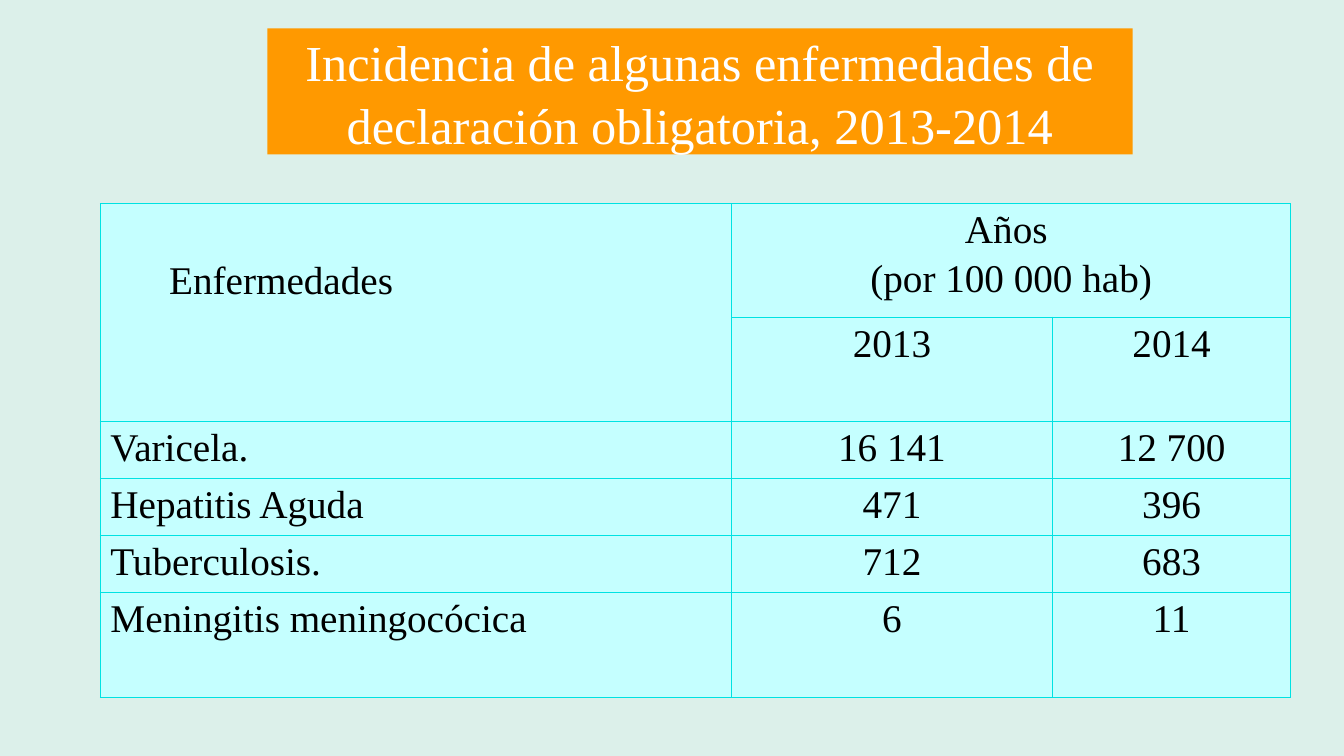
from dataclasses import dataclass

from lxml import etree
from pptx import Presentation
from pptx.dml.color import RGBColor
from pptx.enum.text import MSO_ANCHOR, MSO_AUTO_SIZE, PP_ALIGN
from pptx.oxml.ns import qn
from pptx.util import Pt

LEFT, CENTER = PP_ALIGN.LEFT, PP_ALIGN.CENTER
MIDDLE, NO_FIT = MSO_ANCHOR.MIDDLE, MSO_AUTO_SIZE.NONE

FONT = "Times New Roman"
COLORS = {
    "background": "DCF0EA",
    "banner": "FF9900",
    "banner_text": "FFFFFF",
    "cell": "C5FFFF",
    "border": "00E2E2",
    "text": "000000",
}
COLUMN_WIDTHS = [450.9, 229.2, 170.2]
ROW_HEIGHTS = [81, 74.6, 40.75, 40.75, 40.75, 74.6]


@dataclass
class Heading:
    text: str
    row: int
    column: int
    last_row: int
    last_column: int
    align: PP_ALIGN = CENTER
    margin_left: float = 7.2
    margin_top: float = 3.6


@dataclass
class Disease:
    name: str
    rate_2013: str
    rate_2014: str


HEADINGS = [
    Heading("Enfermedades", 0, 0, 1, 0, LEFT, margin_left=49.2, margin_top=40),
    Heading("Años \n(por 100 000 hab)", 0, 1, 0, 2),
    Heading("2013", 1, 1, 1, 1),
    Heading("2014", 1, 2, 1, 2),
]
DISEASES = [
    Disease("Varicela.", "16 141", "12 700"),
    Disease("Hepatitis Aguda", "471", "396"),
    Disease("Tuberculosis.", "712", "683"),
    Disease("Meningitis meningocócica", "6", "11"),
]


def rgb(name: str) -> RGBColor:
    return RGBColor.from_string(COLORS[name])


def write(frame, text: str, *, size: float = 28, color: str = "text",
          align: PP_ALIGN = LEFT, space_before: float = 0,
          line_spacing: float = 1.0) -> None:
    """Fill a text frame, one paragraph per line of text."""
    frame.text = text
    for index, paragraph in enumerate(frame.paragraphs):
        paragraph.alignment = align
        paragraph.line_spacing = line_spacing
        paragraph.space_before = Pt(space_before if index else 0)
        font = paragraph.runs[0].font
        font.name, font.size = FONT, Pt(size)
        font.color.rgb = rgb(color)


def style_cell(cell) -> None:
    properties = cell._tc.get_or_add_tcPr()
    for side in ("a:lnL", "a:lnR", "a:lnT", "a:lnB"):
        line = etree.SubElement(properties, qn(side), w=str(Pt(0.75)))
        fill = etree.SubElement(line, qn("a:solidFill"))
        etree.SubElement(fill, qn("a:srgbClr"), val=COLORS["border"])
    cell.fill.solid()
    cell.fill.fore_color.rgb = rgb("cell")


def add_banner(slide) -> None:
    banner = slide.shapes.title
    banner.left, banner.top = Pt(191), Pt(20.2)
    banner.width, banner.height = Pt(618), Pt(90)
    banner.fill.solid()
    banner.fill.fore_color.rgb = rgb("banner")
    frame = banner.text_frame
    frame.word_wrap, frame.auto_size = True, NO_FIT
    frame.vertical_anchor = MIDDLE
    write(frame,
          "Incidencia de algunas enfermedades de declaración obligatoria, 2013-2014",
          size=36, color="banner_text", align=CENTER, line_spacing=1.05)


def add_incidence_table(slide) -> None:
    incidence = slide.shapes.add_table(
        len(ROW_HEIGHTS), len(COLUMN_WIDTHS), Pt(71.7), Pt(145.5),
        Pt(sum(COLUMN_WIDTHS)), Pt(sum(ROW_HEIGHTS))).table
    incidence.first_row = incidence.horz_banding = False
    for column, width in zip(incidence.columns, COLUMN_WIDTHS):
        column.width = Pt(width)
    for row, height in zip(incidence.rows, ROW_HEIGHTS):
        row.height = Pt(height)
    for cell in incidence.iter_cells():
        style_cell(cell)

    for heading in HEADINGS:
        cell = incidence.cell(heading.row, heading.column)
        last = incidence.cell(heading.last_row, heading.last_column)
        if (heading.row, heading.column) != (heading.last_row, heading.last_column):
            cell.merge(last)
        cell.margin_left = Pt(heading.margin_left)
        cell.margin_top = Pt(heading.margin_top)
        write(cell.text_frame, heading.text, align=heading.align, space_before=4.2)

    for row, disease in enumerate(DISEASES, start=2):
        write(incidence.cell(row, 0).text_frame, disease.name)
        for column, rate in enumerate((disease.rate_2013, disease.rate_2014), start=1):
            write(incidence.cell(row, column).text_frame, rate, align=CENTER)


def main() -> None:
    deck = Presentation()
    deck.slide_width, deck.slide_height = Pt(960), Pt(540)
    slide = deck.slides.add_slide(deck.slide_layouts[5])
    slide.background.fill.solid()
    slide.background.fill.fore_color.rgb = rgb("background")
    add_banner(slide)
    add_incidence_table(slide)
    deck.save("out.pptx")


if __name__ == "__main__":
    main()
